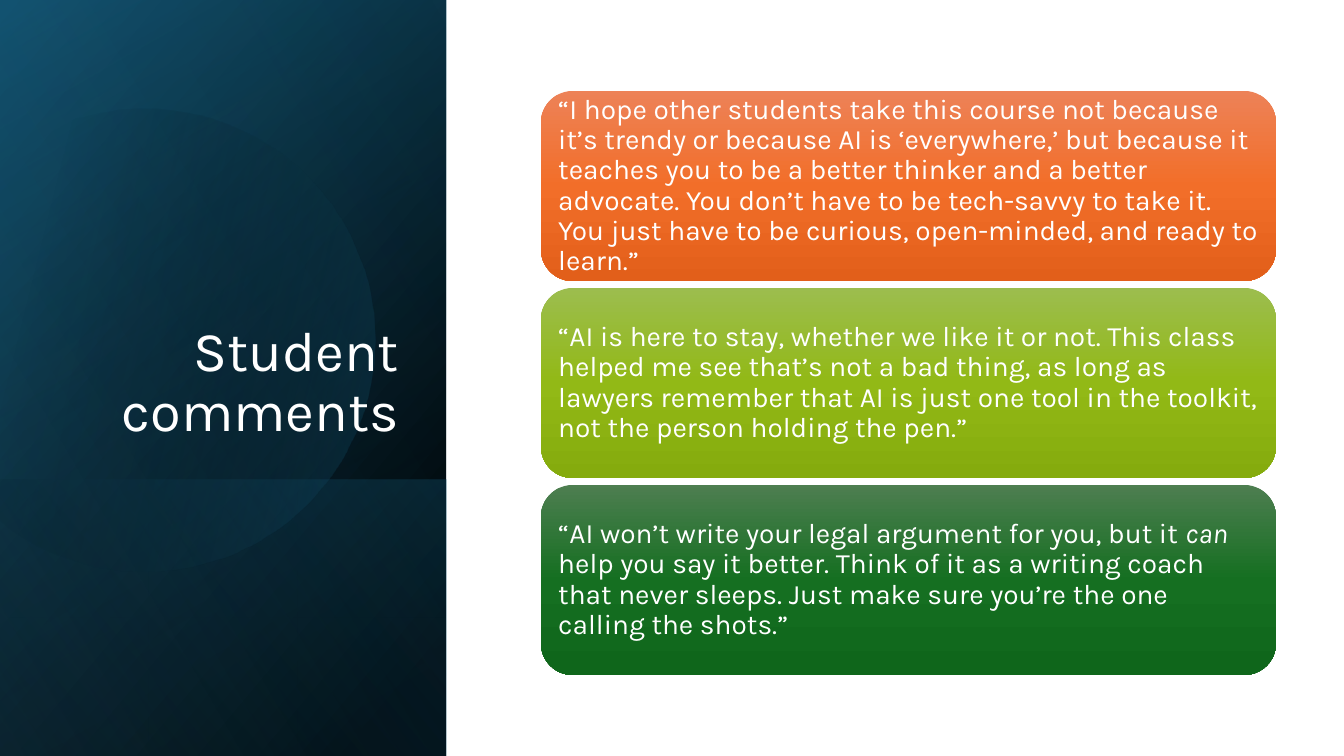
import math

from pptx import Presentation
from pptx import util as u
from pptx.dml.color import RGBColor
from pptx.enum import shapes, text
from pptx.oxml import parse_xml
from pptx.oxml.ns import nsdecls

PAGE_W, PAGE_H = 1344, 756
SCALE = 12192000 / PAGE_W
FONT = "Karla"

WHITE = RGBColor(0xFF, 0xFF, 0xFF)
BLACK = RGBColor(0x00, 0x00, 0x00)
NAVY = RGBColor(0x10, 0x48, 0x62)
TEAL = RGBColor(0x15, 0x60, 0x82)
SKY = RGBColor(0x46, 0xB1, 0xE1)
ORANGES = [RGBColor(0xED, 0x82, 0x57), RGBColor(0xF2, 0x6E, 0x29), RGBColor(0xE2, 0x5F, 0x1A)]
LIMES = [RGBColor(0x9C, 0xBD, 0x4E), RGBColor(0x92, 0xB9, 0x16), RGBColor(0x85, 0xAB, 0x0D)]
GREENS = [RGBColor(0x4D, 0x7E, 0x50), RGBColor(0x15, 0x6F, 0x21), RGBColor(0x0F, 0x66, 0x1B)]

TITLE = "Student comments"
# Each comment: card colours, then (text, italic) runs
COMMENTS = [
    (ORANGES, [("“I hope other students take this course not because it’s trendy or because "
                "AI is ‘everywhere,’ but because it teaches you to be a better thinker and a "
                "better advocate. You don’t have to be tech-savvy to take it. You just have "
                "to be curious, open-minded, and ready to learn.”", False)]),
    (LIMES, [("“AI is here to stay, whether we like it or not. This class helped me see "
              "that’s not a bad thing, as long as lawyers remember that AI is just one tool "
              "in the toolkit, not the person holding the pen.”", False)]),
    (GREENS, [("“AI won’t write your legal argument for you, but it ", False),
              ("can", True),
              (" help you say it better. Think of it as a writing coach that never sleeps. "
               "Just make sure you’re the one calling the shots.”", False)]),
]

# Side panel layers: top, gradient angle, (position, colour, opacity) stops in percent
PANEL_W = 446
LAYERS_BELOW = [
    (0, 50, [(8, BLACK, 100), (100, NAVY, 100)]),
    (0, 30, [(0, BLACK, 0), (99, TEAL, 46)]),
    (480, 130, [(2, TEAL, 29), (100, BLACK, 30)]),
]
DISC_STOPS = [(29, BLACK, 0), (100, TEAL, 43)]
LAYER_ABOVE = (0, 120, [(0, BLACK, 0), (99, SKY, 11)])

DISC_CENTRE, DISC_RADIUS, DISC_CUT = (144, 340), 231, -15
DISC_PIVOT, DISC_TURN = (160, 337), 343.9
CARD_X, CARD_Y, CARD_W, CARD_H, CARD_STEP = 541, 91, 735, 190, 197


def px(length):
    return u.Emu(round(length * SCALE))


def paint(shape, angle, stops):
    """Give the shape a linear gradient and no outline or shadow."""
    marks = "".join(
        f'<a:gs pos="{pos * 1000}"><a:srgbClr val="{color}">'
        f'<a:alpha val="{opacity * 1000}"/></a:srgbClr></a:gs>'
        for pos, color, opacity in stops)
    gradient = parse_xml(
        f'<a:gradFill {nsdecls("a")} rotWithShape="1"><a:gsLst>{marks}</a:gsLst>'
        f'<a:lin ang="{angle * 60000}" scaled="0"/></a:gradFill>')
    shape.element.spPr.insert(2, gradient)  # after the frame and the geometry
    shape.line.fill.background()
    shape.shadow.inherit = False


def add_layer(page, top, angle, stops):
    """Cover the side panel from top to the page bottom with a quarter-turned, flipped box."""
    height = PAGE_H - top
    left, shift = (PANEL_W - height) / 2, (height - PANEL_W) / 2
    layer = page.shapes.add_shape(shapes.MSO_SHAPE.RECTANGLE, px(left), px(top + shift),
                                  px(height), px(PANEL_W))
    layer.rotation = 90
    layer.element.spPr.xfrm.set("flipH", "1")
    paint(layer, angle, stops)


def add_disc(page):
    """Draw a disc cut straight on the left, its points turned back before the rotation."""
    limit = math.acos((DISC_CUT - DISC_CENTRE[0]) / DISC_RADIUS)
    back = math.radians(360 - DISC_TURN)
    points = []
    for step in range(-60, 61):
        angle = limit * step / 60
        x = DISC_CENTRE[0] + DISC_RADIUS * math.cos(angle) - DISC_PIVOT[0]
        y = DISC_CENTRE[1] + DISC_RADIUS * math.sin(angle) - DISC_PIVOT[1]
        points.append((DISC_PIVOT[0] + x * math.cos(back) - y * math.sin(back),
                       DISC_PIVOT[1] + x * math.sin(back) + y * math.cos(back)))
    outline = page.shapes.build_freeform(*points[0], scale=SCALE)
    outline.add_line_segments(points[1:], close=True)
    disc = outline.convert_to_shape()
    disc.rotation = DISC_TURN
    paint(disc, 30, DISC_STOPS)


def write(shape, runs, size, align, anchor):
    frame = shape.text_frame
    frame.word_wrap = True
    frame.auto_size = text.MSO_AUTO_SIZE.NONE
    frame.vertical_anchor = anchor
    para = frame.paragraphs[0]
    para.alignment = align
    para.line_spacing = 0.9
    for words, italic in runs:
        span = para.add_run()
        span.text = words
        span.font.name = FONT
        span.font.size = u.Pt(size)
        span.font.italic = italic
        span.font.color.rgb = WHITE


def add_title(page):
    title = page.shapes.title
    title.left, title.top, title.width, title.height = px(65), px(185), px(344), px(264)
    title.element.getparent().append(title.element)  # bring in front of the panel
    write(title, [(TITLE, False)], 40, text.PP_ALIGN.RIGHT, text.MSO_ANCHOR.BOTTOM)


def add_card(page, row, colors, runs):
    card = page.shapes.add_shape(shapes.MSO_SHAPE.ROUNDED_RECTANGLE, px(CARD_X),
                                 px(CARD_Y + row * CARD_STEP), px(CARD_W), px(CARD_H))
    paint(card, 90, [(50 * i, color, 100) for i, color in enumerate(colors)])
    frame = card.text_frame
    frame.margin_left = frame.margin_right = frame.margin_top = frame.margin_bottom = px(8)
    write(card, runs, 20, text.PP_ALIGN.LEFT, text.MSO_ANCHOR.MIDDLE)


def main():
    deck = Presentation()
    deck.slide_width, deck.slide_height = px(PAGE_W), px(PAGE_H)
    page = deck.slides.add_slide(deck.slide_layouts.get_by_name("Title Only"))
    page.background.fill.solid()
    page.background.fill.fore_color.rgb = WHITE
    for layer in LAYERS_BELOW:
        add_layer(page, *layer)
    add_disc(page)
    add_layer(page, *LAYER_ABOVE)
    add_title(page)
    for row, (colors, runs) in enumerate(COMMENTS):
        add_card(page, row, colors, runs)
    deck.save("out.pptx")


if __name__ == "__main__":
    main()
